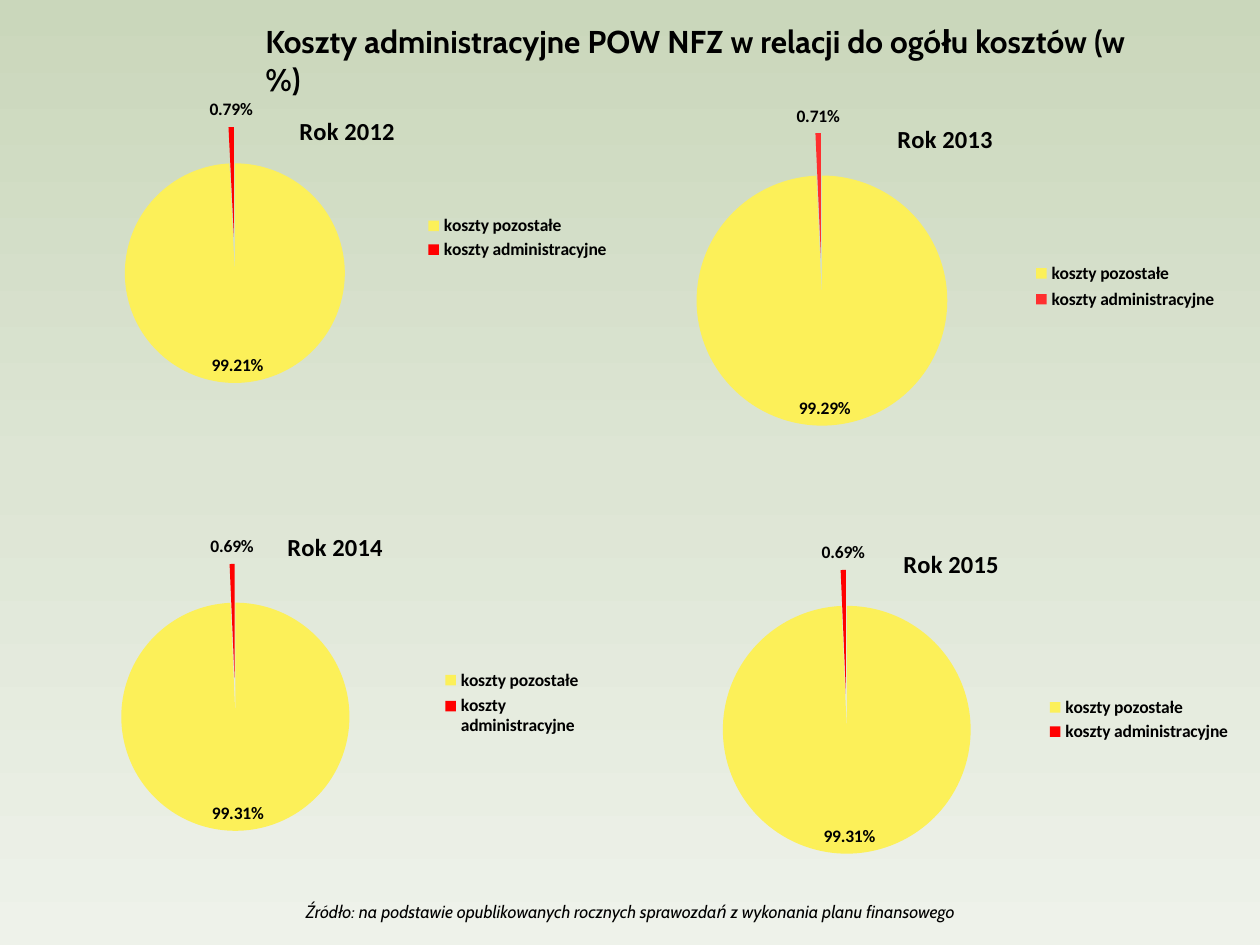
from copy import deepcopy
from dataclasses import dataclass
from lxml import etree
from pptx import Presentation
from pptx.chart.data import CategoryChartData
from pptx.dml.color import RGBColor
from pptx.enum.chart import XL_CHART_TYPE, XL_LABEL_POSITION, XL_LEGEND_POSITION
from pptx.enum.text import MSO_AUTO_SIZE, PP_ALIGN
from pptx.oxml.ns import qn
from pptx.util import Emu, Pt

PIE = XL_CHART_TYPE.PIE
INSIDE = XL_LABEL_POSITION.INSIDE_END
OUTSIDE = XL_LABEL_POSITION.OUTSIDE_END
RIGHT = XL_LEGEND_POSITION.RIGHT
GROW = MSO_AUTO_SIZE.SHAPE_TO_FIT_TEXT
LEFT, CENTER = PP_ALIGN.LEFT, PP_ALIGN.CENTER
SCALE = 914400 / 126


@dataclass(frozen=True)
class Theme:
    ink: str = "000000"
    rest: str = "FCF059"
    admin: str = "FF0000"
    pale: str = "FF2F2F"
    back: tuple = ("CAD7BB", "DDE5D4", "EEF2EA")
    text: str = "Cabin"
    chart: str = "Calibri"
    head: int = 18
    year: int = 14
    small: int = 10


THEME = Theme()
CATS = ("koszty pozostałe", "koszty administracyjne")


@dataclass(frozen=True)
class Year:
    name: str
    share: float
    box: tuple
    plot: tuple
    title: tuple
    legend: tuple
    burst: int
    shift: tuple
    color: str = THEME.admin


YEARS = (
    Year("Rok 2012", 0.0079, (54, 96, 566, 287), (2, 51, 357, 220),
         (241, 14), (366, 116, 195, 52), 0, (15, 18)),
    Year("Rok 2013", 0.0071, (640, 106, 583, 345), (0, 10, 363, 326),
         (253, 11), (390, 151, 190, 58), 30, (17, 17), THEME.pale),
    Year("Rok 2014", 0.0069, (32, 505, 599, 365), (34, 59, 338, 267),
         (251, 21), (405, 159, 150, 78), 17, (17, 17)),
    Year("Rok 2015", 0.0069, (660, 522, 576, 338), (16, 48, 341, 290),
         (239, 20), (385, 171, 188, 53), 17, (12, 17)),
)


def px(n):
    return Emu(round(n * SCALE))


def style(font, face, size, bold=False, italic=False):
    font.name, font.size = face, Pt(size)
    font.bold, font.italic = bold, italic
    font.color.rgb = RGBColor.from_string(THEME.ink)


def paint(slide):
    fill = slide.background.fill
    fill.gradient()
    fill.gradient_angle = 270
    stops = slide._element.find(".//" + qn("a:gsLst"))
    stops.insert(1, deepcopy(stops[0]))
    for i, (stop, color) in enumerate(zip(fill.gradient_stops, THEME.back)):
        stop.position = i / 2
        stop.color.rgb = RGBColor.from_string(color)


def write(slide, box, text, size, align=LEFT, **look):
    frame = slide.shapes.add_textbox(*map(px, box)).text_frame
    frame.word_wrap = True
    frame.auto_size = GROW
    para = frame.paragraphs[0]
    para.alignment = align
    run = para.add_run()
    run.text = text
    style(run.font, THEME.text, size, **look)


def place(parent, index, part, box, inner=False):
    for old in parent.findall(qn("c:layout")):
        parent.remove(old)
    layout = etree.Element(qn("c:layout"))
    manual = etree.SubElement(layout, qn("c:manualLayout"))
    rules = [("layoutTarget", "inner")] if inner else []
    rules += [("xMode", "edge"), ("yMode", "edge")]
    sizes = (box[2], box[3], box[2], box[3])
    rules += [(key, f"{n / full:.4f}") for key, n, full in zip("xywh", part, sizes)]
    for key, val in rules:
        etree.SubElement(manual, qn("c:" + key)).set("val", val)
    parent.insert(index, layout)


def burst(node, before, value):
    mark = etree.Element(qn("c:explosion"))
    mark.set("val", str(value))
    node.find(qn(before)).addprevious(mark)


def draw(slide, year):
    data = CategoryChartData(number_format="0.00%")
    data.categories = CATS
    data.add_series("Series 1", (round(1 - year.share, 4), year.share))
    chart = slide.shapes.add_chart(PIE, *map(px, year.box), data).chart
    style(chart.font, THEME.chart, THEME.small, bold=True)

    run = chart.chart_title.text_frame.paragraphs[0].add_run()
    run.text = year.name
    style(run.font, THEME.chart, THEME.year, bold=True)
    place(chart.chart_title._element, 1, year.title, year.box)

    chart.has_legend = True
    chart.legend.position = RIGHT
    chart.legend.include_in_layout = False
    style(chart.legend.font, THEME.chart, THEME.small, bold=True)
    place(chart.legend._element, 1, year.legend, year.box)

    plot = chart.plots[0]
    plot.vary_by_categories = True
    place(plot._element.getparent(), 0, year.plot, year.box, inner=True)
    row = plot.series[0]
    labels = row.data_labels
    labels.show_value = True
    labels.number_format = "0.00%"
    labels.number_format_is_linked = False
    for i, (color, spot) in enumerate(((THEME.rest, INSIDE), (year.color, OUTSIDE))):
        point = row.points[i]
        point.format.fill.solid()
        point.format.fill.fore_color.rgb = RGBColor.from_string(color)
        point.format.line.fill.background()
        style(point.data_label.font, THEME.chart, THEME.small, bold=True)
        point.data_label.position = spot
    for node, value in zip(row._element.findall(qn("c:dPt")), year.shift):
        burst(node, "c:spPr", value)
    if year.burst:
        burst(row._element, "c:dPt", year.burst)


def main():
    deck = Presentation()
    deck.slide_width, deck.slide_height = px(1260), px(945)
    slide = deck.slides.add_slide(deck.slide_layouts[6])
    paint(slide)
    write(slide, (253, 16, 922, 50),
          "Koszty administracyjne POW NFZ w relacji do ogółu kosztów (w %)",
          THEME.head, bold=True)
    for year in YEARS:
        draw(slide, year)
    write(slide, (164, 895, 932, 34),
          "Źródło: na podstawie opublikowanych rocznych sprawozdań z wykonania planu finansowego",
          THEME.small, CENTER, italic=True)
    deck.save("out.pptx")


if __name__ == "__main__":
    main()
